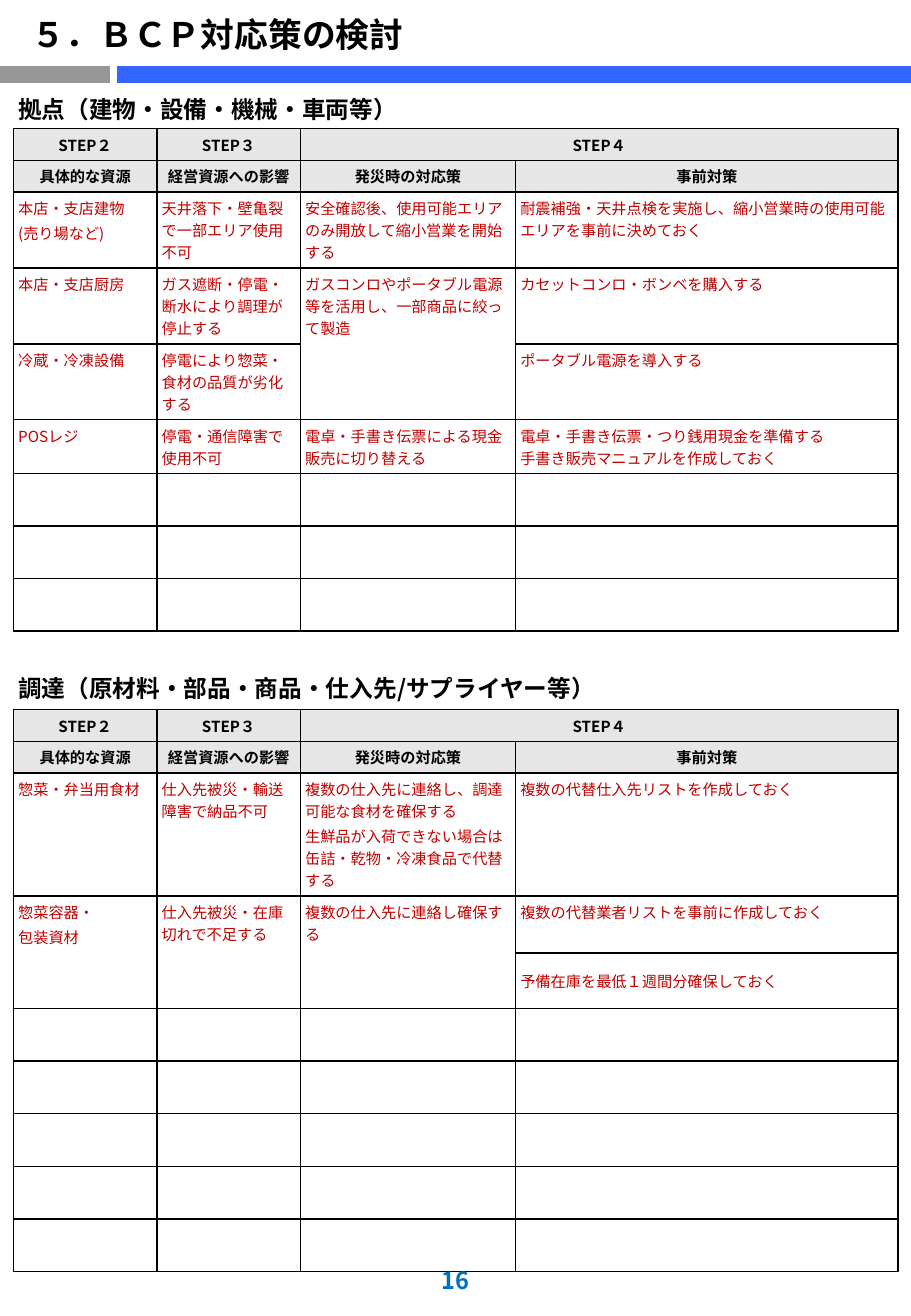
from pptx import Presentation
from pptx.dml.color import RGBColor
from pptx.enum.shapes import MSO_CONNECTOR
from pptx.enum.text import MSO_ANCHOR, PP_ALIGN
from pptx.oxml.ns import qn
from pptx.util import Cm, Pt
from lxml.etree import SubElement

BLACK, RED, BLUE, GREY, BAND, NUMBER = (
    "000000", "C00000", "3366FF", "969696", "E7E6E6", "0070C0")
GOTHIC = "Noto Sans CJK JP"
COLUMN_WIDTHS = [3, 3, 4.5, 8]
HEADER = 0.66
BLANK = 1.1

HEADER_ROWS = [
    (HEADER, ["STEP２", "STEP３", "STEP４", ""]),
    (HEADER, ["具体的な資源", "経営資源への影響", "発災時の対応策", "事前対策"]),
]

SITE_ROWS = [
    (1.59, ["本店・支店建物\n(売り場など)", "天井落下・壁亀裂で一部エリア使用不可",
            "安全確認後、使用可能エリアのみ開放して縮小営業を開始する",
            "耐震補強・天井点検を実施し、縮小営業時の使用可能エリアを事前に決めておく"]),
    (1.58, ["本店・支店厨房", "ガス遮断・停電・断水により調理が停止する",
            "ガスコンロやポータブル電源等を活用し、一部商品に絞って製造",
            "カセットコンロ・ボンベを購入する"]),
    (1.58, ["冷蔵・冷凍設備", "停電により惣菜・食材の品質が劣化する", "",
            "ポータブル電源を導入する"]),
    (1.12, ["POSレジ", "停電・通信障害で使用不可",
            "電卓・手書き伝票による現金販売に切り替える",
            "電卓・手書き伝票・つり銭用現金を準備する\n手書き販売マニュアルを作成しておく"]),
] + [(BLANK, [""] * 4)] * 3

SUPPLY_ROWS = [
    (2.57, ["惣菜・弁当用食材", "仕入先被災・輸送障害で納品不可",
            "複数の仕入先に連絡し、調達可能な食材を確保する\n"
            "生鮮品が入荷できない場合は缶詰・乾物・冷凍食品で代替する",
            "複数の代替仕入先リストを作成しておく"]),
    (1.19, ["惣菜容器・\n包装資材", "仕入先被災・在庫切れで不足する",
            "複数の仕入先に連絡し確保する",
            "複数の代替業者リストを事前に作成しておく"]),
    (1.16, ["", "", "", "予備在庫を最低１週間分確保しておく"]),
] + [(BLANK, [""] * 4)] * 5

SECTIONS = [
    (0.91, "拠点（建物・設備・機械・車両等）", "Arial", "B", SITE_ROWS),
    (1.64, "調達（原材料・部品・商品・仕入先/サプライヤー等）", GOTHIC, "TB", SUPPLY_ROWS),
]
OPEN_BELOW = {(4, 2), (14, 0), (14, 1), (14, 2)}


def colour(value):
    return RGBColor.from_string(value)


class PlanPage:
    def __init__(self, deck):
        self.page = deck.slides.add_slide(deck.slide_layouts[5])

    def fill_text(self, frame, text, size, ink, bold=False, face=GOTHIC,
                  align=PP_ALIGN.LEFT, gap=0):
        frame.text = text
        frame.word_wrap = True
        for index, para in enumerate(frame.paragraphs):
            para.alignment = align
            para.space_before = Pt(gap if index else 0)
            for span in para.runs:
                span.font.size = Pt(size)
                span.font.bold = bold
                span.font.name = face
                span.font.color.rgb = colour(ink)
                SubElement(span.font._element, qn("a:ea"), typeface=face)

    def title(self, text):
        box = self.page.shapes.title
        box.left, box.top, box.width, box.height = Cm(0.41), Cm(0.1), Cm(18.21), Cm(1.17)
        box.text_frame.vertical_anchor = MSO_ANCHOR.BOTTOM
        self.fill_text(box.text_frame, text, 20, BLACK, True)

    def rule(self, start, end, ink):
        line = self.page.shapes.add_connector(
            MSO_CONNECTOR.STRAIGHT, Cm(start), Cm(1.55), Cm(end), Cm(1.55))
        line.line.color.rgb = colour(ink)
        line.line.width = Pt(10)
        SubElement(line._element.spPr, qn("a:effectLst"))

    def page_number(self, text):
        box = self.page.shapes.add_textbox(0, Cm(26.16), Cm(19.05), Cm(1.02))
        box.text_frame.vertical_anchor = MSO_ANCHOR.BOTTOM
        self.fill_text(box.text_frame, text, 14, NUMBER, True, align=PP_ALIGN.CENTER)

    def cell(self, cell, text, sides, fill=None, anchor=MSO_ANCHOR.TOP, **style):
        cell.margin_left = cell.margin_right = Cm(0.1)
        cell.margin_top = cell.margin_bottom = Cm(0.1)
        cell.vertical_anchor = anchor
        self.fill_text(cell.text_frame, text, **style)
        properties = cell._tc.get_or_add_tcPr()
        for side in "LRTB":
            edge = SubElement(properties, qn(f"a:ln{side}"), w=str(Pt(1)))
            if side in sides:
                paint = SubElement(edge, qn("a:solidFill"))
                SubElement(paint, qn("a:srgbClr"), val=BLACK)
            else:
                SubElement(edge, qn("a:noFill"))
        if fill:
            cell.fill.solid()
            cell.fill.fore_color.rgb = colour(fill)
        else:
            cell.fill.background()

    def sides(self, row, column):
        hidden = "B" if (row, column) in OPEN_BELOW else ""
        hidden += "T" if (row - 1, column) in OPEN_BELOW else ""
        return [side for side in "LRTB" if side not in hidden]

    def table(self, sections):
        heights = []
        for height, _, _, _, rows in sections:
            heights += [height] + [row[0] for row in HEADER_ROWS + rows]
        table = self.page.shapes.add_table(
            len(heights), 4, Cm(0.28), Cm(1.78),
            Cm(sum(COLUMN_WIDTHS)), Cm(sum(heights))).table
        table.first_row = table.horz_banding = False
        for column, width in zip(table.columns, COLUMN_WIDTHS):
            column.width = Cm(width)
        for row, height in zip(table.rows, heights):
            row.height = Cm(height)

        top = 0
        for _, heading, face, heading_sides, rows in sections:
            for column in range(4):
                self.cell(table.cell(top, column), "" if column else heading,
                          heading_sides, anchor=MSO_ANCHOR.BOTTOM,
                          size=14, ink=BLACK, bold=True, face=face)
            table.cell(top, 0).merge(table.cell(top, 3))
            for row, (_, texts) in enumerate(HEADER_ROWS, top + 1):
                for column, text in enumerate(texts):
                    self.cell(table.cell(row, column), text, "LRTB", BAND,
                              MSO_ANCHOR.MIDDLE, size=9, ink=BLACK, bold=True,
                              align=PP_ALIGN.CENTER)
            table.cell(top + 1, 2).merge(table.cell(top + 1, 3))
            for row, (_, texts) in enumerate(rows, top + 3):
                for column, text in enumerate(texts):
                    middle = column == 3 and (row - 1, 0) in OPEN_BELOW
                    self.cell(table.cell(row, column), text, self.sides(row, column),
                              anchor=MSO_ANCHOR.MIDDLE if middle else MSO_ANCHOR.TOP,
                              size=9, ink=RED, gap=0 if column == 3 else 1.8)
            top += 3 + len(rows)


def main():
    deck = Presentation()
    deck.slide_width, deck.slide_height = Cm(19.05), Cm(27.51)
    plan = PlanPage(deck)
    plan.rule(0, 2.29, GREY)
    plan.rule(2.44, 19.05, BLUE)
    plan.table(SECTIONS)
    plan.title("５．ＢＣＰ対応策の検討")
    plan.page_number("16")
    deck.save("out.pptx")


if __name__ == "__main__":
    main()
